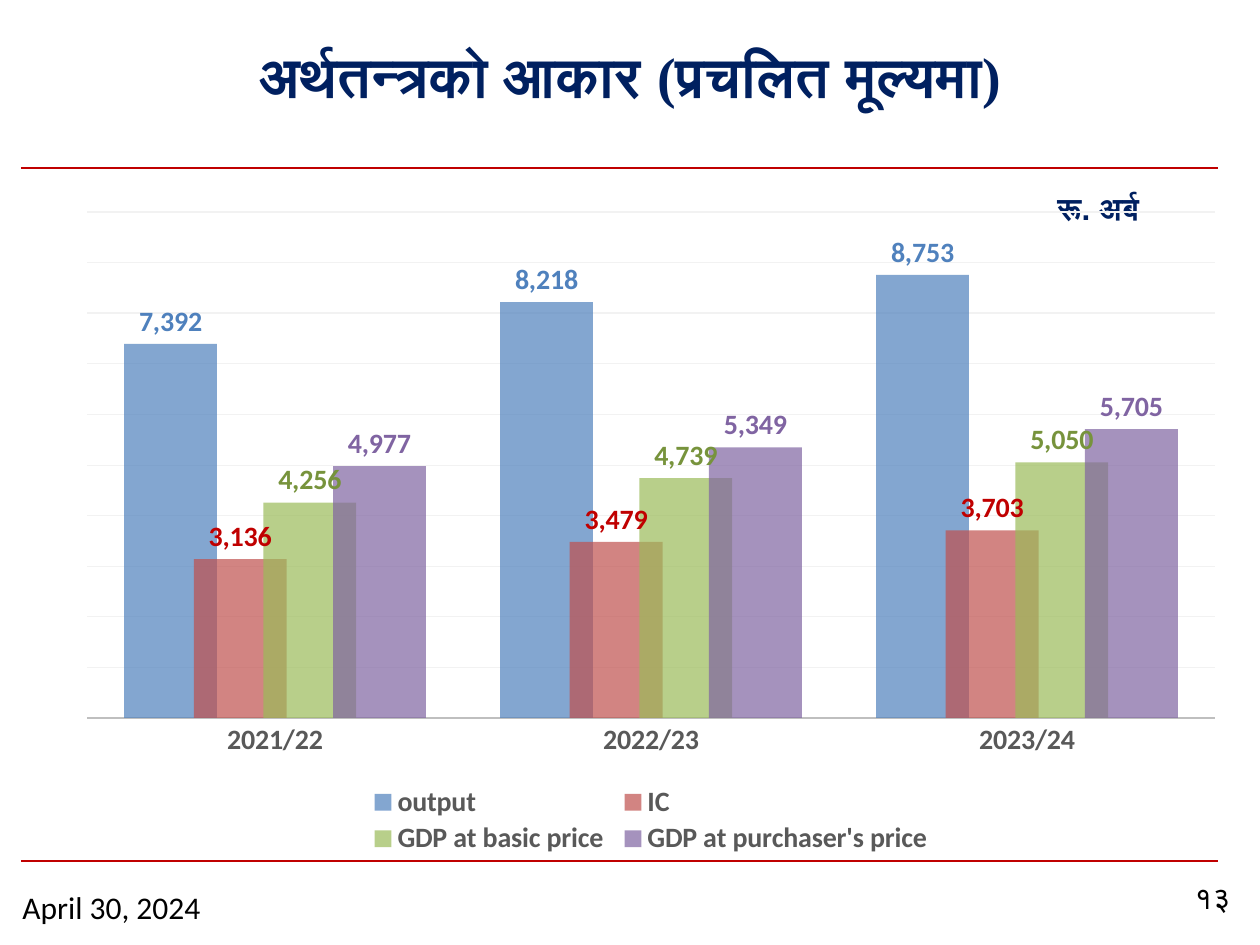
import pptx
import pptx.chart.data
import pptx.dml.color
import pptx.enum.chart
import pptx.enum.shapes
import pptx.enum.text
import pptx.oxml
import pptx.oxml.ns
import pptx.util

# Content
TITLE = "अर्थतन्त्रको आकार (प्रचलित मूल्यमा)"
YEARS = ["2021/22", "2022/23", "2023/24"]
SERIES = [  # name, values, fill colour, label colour
    ("output", (7392, 8218, 8753), "blue", "blue"),
    ("IC", (3136, 3479, 3703), "red", "dark_red"),
    ("GDP at basic price", (4256, 4739, 5050), "green", "dark_green"),
    ("GDP at purchaser's price", (4977, 5349, 5705), "purple", "purple"),
]
UNIT = ("रू. अर्ब", (1045, 183, 152, 50), "Arial", "navy", True, "LEFT")
FOOTERS = [
    ("April 30, 2024", (10, 882, 273, 52), "Calibri", "black", False, "LEFT"),
    ("१३", (1176, 872, 73, 60), "Roboto", "black", False, "CENTER"),
]
COLORS = {
    "navy": "002060", "black": "000000", "gray": "595959", "axis": "BFBFBF",
    "grid": "F2F2F2", "blue": "4F81BD", "red": "C0504D", "dark_red": "C00000",
    "green": "9BBB59", "dark_green": "77933C", "purple": "8064A2",
}

# Layout in px
SLIDE_SIZE = (1260, 945)
TITLE_BOX = (63, 10, 1134, 130)
RULE_LEFT, RULE_RIGHT, RULE_TOPS = 21, 1218, (168, 861)
CHART_BOX = (63, 199, 1176, 665)
PLOT_BOX = (87, 212, 1128, 506)
LEGEND_BOX = (363, 783, 576, 75)
NUMBER_FORMAT = "#,##0"


def px(length):
    return pptx.util.Emu(round(length * 914400 / 126))


def rgb(name):
    return pptx.dml.color.RGBColor.from_string(COLORS[name])


def style_font(font, name, size, color, bold):
    font.name, font.size, font.bold = name, pptx.util.Pt(size), bold
    font.color.rgb = rgb(color)


def style_line(line, color, width):
    line.color.rgb = rgb(color)
    line.width = pptx.util.Pt(width)


def add_label(slide, text, box, font, color, bold, align):
    shape = slide.shapes.add_textbox(*map(px, box))
    shape.text_frame.word_wrap = True
    shape.text_frame.text = text
    paragraph = shape.text_frame.paragraphs[0]
    paragraph.alignment = getattr(pptx.enum.text.PP_ALIGN, align)
    style_font(paragraph.runs[0].font, font, 18, color, bold)


def add_rule(slide, top):
    line = slide.shapes.add_connector(
        pptx.enum.shapes.MSO_CONNECTOR.STRAIGHT,
        px(RULE_LEFT), px(top), px(RULE_RIGHT), px(top))
    style_line(line.line, "dark_red", 1.5)
    line._element.spPr.append(pptx.oxml.parse_xml(
        f"<a:effectLst {pptx.oxml.ns.nsdecls('a')}/>"))


def place_in_chart(parent, index, box, inner=False):
    """Give a chart part a fixed position, as fractions of the chart box."""
    for old in parent.findall(pptx.oxml.ns.qn("c:layout")):
        parent.remove(old)
    left, top, width, height = CHART_BOX
    values = ((box[0] - left) / width, (box[1] - top) / height,
              box[2] / width, box[3] / height)
    target = '<c:layoutTarget val="inner"/>' if inner else ""
    modes = '<c:xMode val="edge"/><c:yMode val="edge"/>'
    sizes = "".join(f'<c:{key} val="{value:.4f}"/>' for key, value in zip("xywh", values))
    parent.insert(index, pptx.oxml.parse_xml(
        f"<c:layout {pptx.oxml.ns.nsdecls('c')}><c:manualLayout>"
        f"{target}{modes}{sizes}</c:manualLayout></c:layout>"))


def add_size_chart(slide):
    data = pptx.chart.data.CategoryChartData(number_format=NUMBER_FORMAT)
    data.categories = YEARS
    for name, values, _, _ in SERIES:
        data.add_series(name, values)
    chart = slide.shapes.add_chart(
        pptx.enum.chart.XL_CHART_TYPE.COLUMN_CLUSTERED, *map(px, CHART_BOX), data).chart
    chart.has_title = False
    style_font(chart.font, "Calibri", 16, "black", False)

    # Columns and their labels
    plot = chart.plots[0]
    plot.gap_width, plot.overlap, plot.vary_by_categories = 80, 25, False
    for series, (_, _, fill_color, label_color) in zip(plot.series, SERIES):
        fill = series.format.fill
        fill.solid()
        fill.fore_color.rgb = rgb(fill_color)
        color = next(series._element.iter(pptx.oxml.ns.qn("a:srgbClr")))
        color.append(pptx.oxml.parse_xml(
            f'<a:alpha {pptx.oxml.ns.nsdecls("a")} val="70000"/>'))
        labels = series.data_labels
        labels.show_value = True
        labels.number_format, labels.number_format_is_linked = NUMBER_FORMAT, False
        labels.position = pptx.enum.chart.XL_LABEL_POSITION.OUTSIDE_END
        style_font(labels.font, "Calibri", 16, label_color, True)

    # Axes
    no_tick = pptx.enum.chart.XL_TICK_MARK.NONE
    years = chart.category_axis
    years.major_tick_mark = years.minor_tick_mark = no_tick
    style_font(years.tick_labels.font, "Calibri", 16, "gray", True)
    style_line(years.format.line, "axis", 1.25)
    amounts = chart.value_axis
    amounts.minimum_scale, amounts.maximum_scale = 0, 10000
    amounts.major_unit, amounts.minor_unit = 2000, 1000
    amounts.has_major_gridlines = amounts.has_minor_gridlines = True
    style_line(amounts.major_gridlines.format.line, "grid", 0.75)
    minor = amounts._element.find(pptx.oxml.ns.qn("c:minorGridlines"))
    minor.append(pptx.oxml.parse_xml(
        f'<c:spPr {pptx.oxml.ns.nsdecls("c", "a")}><a:ln w="3175"><a:solidFill>'
        f'<a:srgbClr val="{COLORS["grid"]}"/></a:solidFill></a:ln></c:spPr>'))
    amounts.visible = False

    # Legend and fixed positions
    chart.has_legend = True
    legend = chart.legend
    legend.position = pptx.enum.chart.XL_LEGEND_POSITION.BOTTOM
    legend.include_in_layout = False
    style_font(legend.font, "Calibri", 16, "gray", True)
    place_in_chart(legend._element, 1, LEGEND_BOX)
    place_in_chart(chart._chartSpace.chart.plotArea, 0, PLOT_BOX, inner=True)


def main():
    presentation = pptx.Presentation()
    presentation.slide_width, presentation.slide_height = map(px, SLIDE_SIZE)
    slide = presentation.slides.add_slide(presentation.slide_layouts[5])

    # Rules and title
    for top in RULE_TOPS:
        add_rule(slide, top)
    title = slide.shapes.title
    title.left, title.top, title.width, title.height = map(px, TITLE_BOX)
    title.text_frame.text = TITLE
    title.text_frame.vertical_anchor = pptx.enum.text.MSO_ANCHOR.MIDDLE
    paragraph = title.text_frame.paragraphs[0]
    paragraph.alignment = pptx.enum.text.PP_ALIGN.CENTER
    style_font(paragraph.runs[0].font, "Times New Roman", 32, "navy", True)

    # Unit, chart and footers
    add_label(slide, *UNIT)
    add_size_chart(slide)
    for footer in FOOTERS:
        add_label(slide, *footer)
    presentation.save("out.pptx")


if __name__ == "__main__":
    main()
